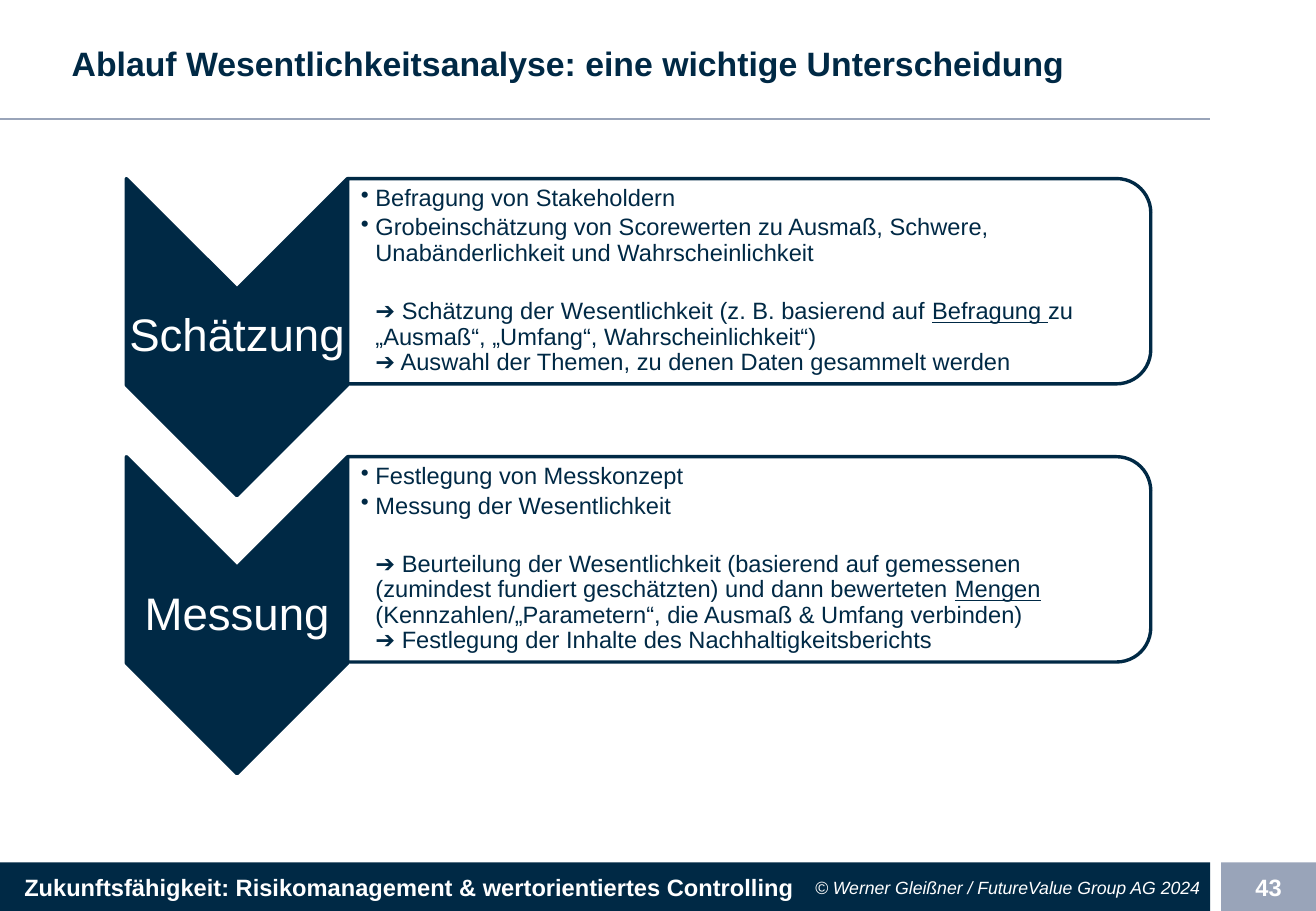
from pptx import Presentation
from pptx.dml.color import RGBColor
from pptx.enum.shapes import MSO_CONNECTOR, MSO_SHAPE as Shape
from pptx.enum.text import MSO_ANCHOR as Anchor, PP_ALIGN as Align
from pptx.oxml.ns import qn
from pptx.util import Emu, Inches, Pt
from lxml.etree import SubElement

WIDTH, HEIGHT = 10.83, 7.5
BAR_W, BAR_TOP, BAR_H = 9.96, 7.1, 0.41
NAVY, GREY, WHITE = "002945", "99A4B9", "FFFFFF"
INSETS = (0.08, 0.04, 0.08, 0.04)

# Each bullet is a list of (text, underlined) spans; \n is a line break
STEPS = [
    ("Schätzung", [
        [("Befragung von Stakeholdern", False)],
        [("Grobeinschätzung von Scorewerten zu Ausmaß, Schwere, Unabänderlichkeit "
          "und Wahrscheinlichkeit\n\n➔ Schätzung der Wesentlichkeit "
          "(z. B. basierend auf ", False),
         ("Befragung ", True),
         ("zu „Ausmaß“, „Umfang“, Wahrscheinlichkeit“) \n"
          "➔ Auswahl der Themen, zu denen Daten gesammelt werden", False)],
    ]),
    ("Messung", [
        [("Festlegung von Messkonzept", False)],
        [("Messung der Wesentlichkeit\n\n➔ Beurteilung der Wesentlichkeit "
          "(basierend auf gemessenen (zumindest fundiert geschätzten) "
          "und dann bewerteten ", False),
         ("Mengen", True),
         (" (Kennzahlen/„Parametern“, die Ausmaß & Umfang verbinden)\n"
          "➔ Festlegung der Inhalte des Nachhaltigkeitsberichts", False)],
    ]),
]


def color(value):
    return RGBColor.from_string(value)


def apply(target, values):
    for name, value in values.items():
        setattr(target, name, value)


def add_block(slide, kind, box, fill, line=None, rotation=0):
    """Place a preset shape so that it covers box once it is rotated."""
    left, top, width, height = box
    if rotation == 90:
        left, top = left + (width - height) / 2, top + (height - width) / 2
        width, height = height, width
    block = slide.shapes.add_shape(kind, *map(Inches, (left, top, width, height)))
    block.rotation = rotation
    block.shadow.inherit = False
    block.fill.solid()
    block.fill.fore_color.rgb = color(fill)
    if line:
        block.line.color.rgb = color(line)
        block.line.width = Pt(2)
    else:
        block.line.fill.background()
    return block


def set_frame(shape, insets=INSETS, wrap=True):
    frame = shape.text_frame
    sides = ("margin_left", "margin_top", "margin_right", "margin_bottom")
    apply(frame, {"word_wrap": wrap, "vertical_anchor": Anchor.MIDDLE,
                  **dict(zip(sides, map(Inches, insets)))})
    return frame


def add_text(slide, box, insets=INSETS):
    return set_frame(slide.shapes.add_textbox(*map(Inches, box)), insets)


def write(paragraph, text, size, ink, align=Align.LEFT, **style):
    paragraph.alignment = align
    for number, part in enumerate(text.split("\n")):
        if number:
            paragraph.add_line_break()
        if part:
            run = paragraph.add_run()
            run.text = part
            apply(run.font, {"name": "Arial", "size": Pt(size), **style})
            run.font.color.rgb = color(ink)


def add_header(slide, box):
    left, top, width, height = box
    title = add_text(slide, (0.51, 0.16, width - 0.51, 0.71))
    write(title.paragraphs[0],
          "Ablauf Wesentlichkeitsanalyse: eine wichtige Unterscheidung",
          20, NAVY, bold=True)
    rule_y = Inches(top + height)
    rule = slide.shapes.add_connector(
        MSO_CONNECTOR.STRAIGHT, Inches(left), rule_y, Inches(left + width), rule_y)
    rule.line.color.rgb = color(GREY)
    rule.line.width = Pt(1.5)
    SubElement(rule.element.spPr, qn("a:effectLst"))


def add_footer(slide, box):
    left, top, width, height = box
    bar = add_block(slide, Shape.RECTANGLE, (left, top, BAR_W, height), NAVY)
    topic = set_frame(bar, (0.2, 0.04, 0.08, 0.04), wrap=False)
    write(topic.paragraphs[0],
          "Zukunftsfähigkeit: Risikomanagement & wertorientiertes Controlling",
          14, WHITE, bold=True)
    number_left = BAR_W + 0.09
    number = add_block(slide, Shape.RECTANGLE,
                       (number_left, top, width - number_left, height), GREY)
    write(set_frame(number).paragraphs[0], "43", 14, WHITE, Align.CENTER, bold=True)
    rights = add_text(slide, (BAR_W - 4.33, top, 4.33, height))
    write(rights.paragraphs[0], "© Werner Gleißner / FutureValue Group AG 2024",
          10.5, WHITE, Align.RIGHT, italic=True)


def add_bullets(frame, bullets):
    for number, spans in enumerate(bullets):
        paragraph = frame.add_paragraph() if number else frame.paragraphs[0]
        apply(paragraph, {"line_spacing": 0.9, "space_after": Pt(2.1)})
        props = paragraph._p.get_or_add_pPr()
        props.set("marL", str(Inches(0.12)))
        props.set("indent", str(-Inches(0.12)))
        SubElement(props, qn("a:buChar"), char="•")
        for text, underlined in spans:
            write(paragraph, text, 14, NAVY, underline=underlined)


def add_step(slide, box, label, bullets):
    left, top, width, height = box
    arrow_w, panel_h = 1.82, 1.69
    panel_left = left + arrow_w

    # Arrow with its label below the notch
    add_block(slide, Shape.CHEVRON, (left, top, arrow_w, height), NAVY, NAVY, 90)
    name = add_text(slide, (left, top + arrow_w / 2, arrow_w, height - arrow_w),
                    (0.02,) * 4)
    name.paragraphs[0].line_spacing = 0.9
    write(name.paragraphs[0], label, 27, WHITE, Align.CENTER)

    # Panel rounded on the right, with its bullets
    panel = add_block(slide, Shape.ROUND_2_SAME_RECTANGLE,
                      (panel_left, top, width - arrow_w, panel_h), WHITE, NAVY, 90)
    fill = panel.element.spPr.find(qn("a:solidFill"))
    SubElement(fill[0], qn("a:alpha"), val="90000")
    details = add_text(slide, (panel_left, top + 0.08, width - arrow_w - 0.08,
                               panel_h - 0.16), (0.11, 0.01, 0.01, 0.01))
    add_bullets(details, bullets)


def main():
    deck = Presentation()
    deck.slide_width, deck.slide_height = Inches(WIDTH), Inches(HEIGHT)
    slide = deck.slides.add_slide(deck.slide_layouts[6])
    add_footer(slide, (0, BAR_TOP, WIDTH, BAR_H))
    add_header(slide, (0, 0, BAR_W, 0.98))
    for row, (label, bullets) in enumerate(STEPS):
        add_step(slide, (1.04, 1.47 + 2.29 * row, 8.43, 2.61), label, bullets)
    deck.save("out.pptx")


if __name__ == "__main__":
    main()
